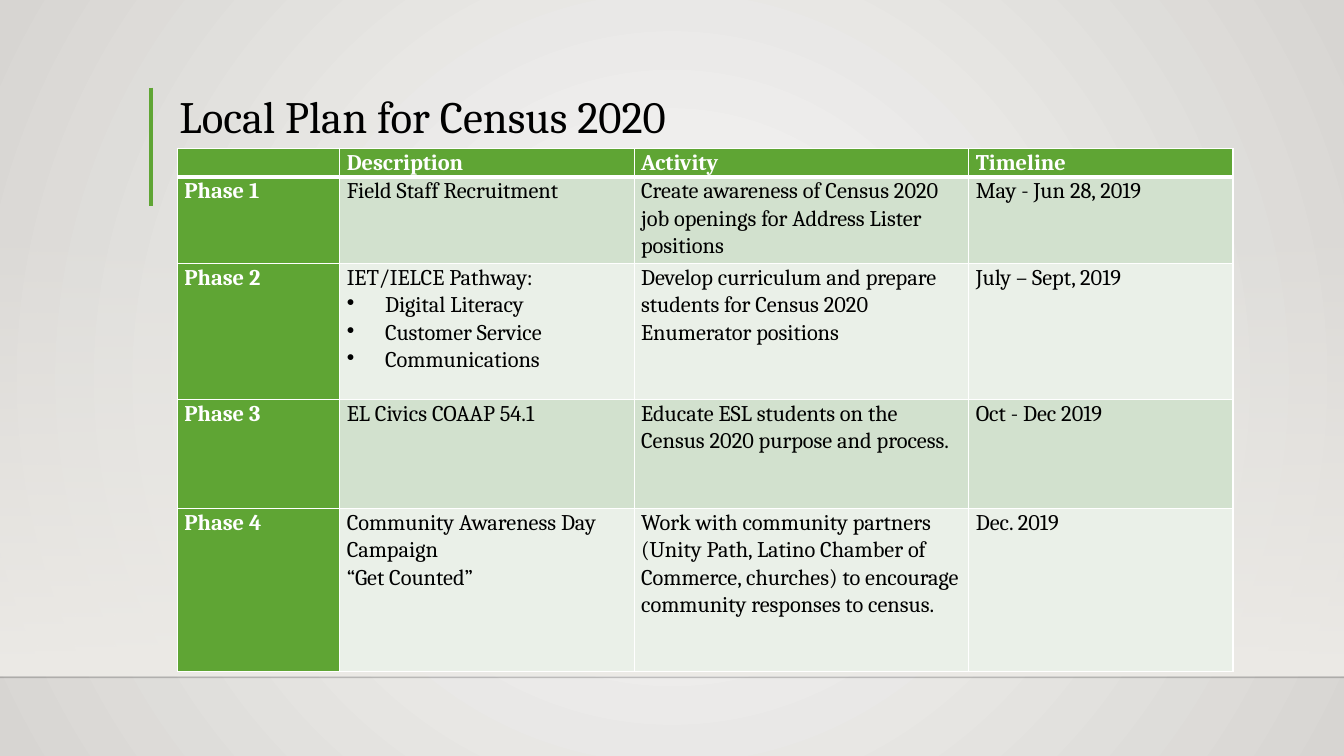
from lxml import etree
from pptx import Presentation
from pptx import util as u
from pptx.dml.color import RGBColor
from pptx.enum import shapes, text
from pptx.oxml import ns

FONT = "Cambria"
BULLET = "•"
COLORS = {
    "green": "5FA534", "band": "D2E1CE", "pale": "EAF0E8", "white": "FFFFFF",
    "black": "000000", "horizon": "000001", "floor": "EDEBE7",
    "center": "FAFAF9", "edge": "D7D5D2",
}
COLUMN_WIDTHS = [1.61, 2.92, 3.32, 2.62]
ROW_HEIGHTS = [0.26, 0.81, 1.35, 1.08, 1.62]
PLAN = [
    ["", "Description", "Activity", "Timeline"],
    ["Phase 1", "Field Staff Recruitment",
     "Create awareness of Census 2020 job openings for Address Lister positions",
     "May - Jun 28, 2019"],
    ["Phase 2",
     "IET/IELCE Pathway:\n•Digital Literacy\n•Customer Service\n•Communications",
     "Develop curriculum and prepare students for Census 2020 Enumerator positions",
     "July – Sept, 2019"],
    ["Phase 3", "EL Civics COAAP 54.1",
     "Educate ESL students on the Census 2020 purpose and process.",
     "Oct - Dec 2019"],
    ["Phase 4", "Community Awareness Day Campaign\n“Get Counted”",
     "Work with community partners (Unity Path, Latino Chamber of Commerce, "
     "churches) to encourage community responses to census.",
     "Dec. 2019"],
]


def rgb(name):
    """Return the named colour."""
    return RGBColor.from_string(COLORS[name])


def apply_format(target, values):
    """Set each attribute in values on target."""
    for name, value in values.items():
        setattr(target, name, value)


def add_element(parent, tag, **attributes):
    """Append a drawing element with attributes to parent."""
    return etree.SubElement(parent, ns.qn(tag), attributes)


def set_alpha(element, color, percent):
    """Give the first use of a colour inside element an opacity."""
    found = next(node for node in element.iter(ns.qn("a:srgbClr"))
                 if node.get("val") == COLORS[color])
    add_element(found, "a:alpha", val=str(percent * 1000))


def set_gradient(fill, names):
    """Fill with a gradient through two named colours."""
    fill.gradient()
    for stop, name in zip(fill.gradient_stops, names):
        stop.color.rgb = rgb(name)


def set_background(slide):
    """Paint the slide with a circular gradient."""
    set_gradient(slide.background.fill, ["center", "edge"])
    linear = next(slide.background._cSld.iter(ns.qn("a:lin")))
    gradient = linear.getparent()
    gradient.remove(linear)
    circle = add_element(gradient, "a:path", path="circle")
    add_element(circle, "a:fillToRect", l="50000", t="50000", r="50000", b="50000")


def add_floor(slide):
    """Add the panel that fades in above the horizon."""
    shape = slide.shapes.add_shape(
        shapes.MSO_SHAPE.RECTANGLE, u.Inches(0), u.Inches(2.2),
        u.Inches(13.33), u.Inches(4.5))
    shape.shadow.inherit = False
    shape.line.fill.background()
    set_gradient(shape.fill, ["floor", "floor"])
    shape.fill.gradient_angle = 270
    set_alpha(shape.fill._xPr, "floor", 0)


def add_line(slide, start, end, color, width):
    """Add a straight line and return it."""
    line = slide.shapes.add_connector(
        shapes.MSO_CONNECTOR.STRAIGHT, *map(u.Inches, start + end))
    line.line.color.rgb = rgb(color)
    line.line.width = u.Pt(width)
    add_element(line._element.spPr, "a:effectLst")
    return line


def add_run(paragraph, content, size, color, bold=False):
    """Add formatted text to a paragraph."""
    run = paragraph.add_run()
    run.text = content
    apply_format(run.font, {"name": FONT, "size": u.Pt(size), "bold": bold})
    run.font.color.rgb = rgb(color)


def add_title(slide, content):
    """Add the slide title."""
    box = slide.shapes.add_textbox(
        u.Inches(1.68), u.Inches(0.89), u.Inches(10.41), u.Inches(0.58))
    apply_format(box.text_frame, {
        "word_wrap": True, "vertical_anchor": text.MSO_ANCHOR.BOTTOM})
    paragraph = box.text_frame.paragraphs[0]
    paragraph.line_spacing = 0.9
    add_run(paragraph, content, 32, "black")


def add_borders(cell, bottom_width):
    """Draw white borders round a cell."""
    properties = cell._tc.get_or_add_tcPr()
    for side, width in zip("LRTB", [1, 1, 1, bottom_width]):
        line = add_element(properties, f"a:ln{side}", w=str(u.Pt(width)))
        fill = add_element(line, "a:solidFill")
        add_element(fill, "a:srgbClr", val=COLORS["white"])


def fill_cell(cell, content, fill, heading, bottom_width):
    """Write and format one table cell."""
    apply_format(cell, {
        "margin_left": u.Inches(0.07), "margin_right": u.Inches(0.07),
        "margin_top": 0, "margin_bottom": 0})
    add_borders(cell, bottom_width)
    cell.fill.solid()
    cell.fill.fore_color.rgb = rgb(fill)
    for index, line in enumerate(content.split("\n")):
        frame = cell.text_frame
        paragraph = frame.add_paragraph() if index else frame.paragraphs[0]
        paragraph.line_spacing = 1.07
        if line.startswith(BULLET):
            properties = paragraph._p.get_or_add_pPr()
            indent = u.Inches(0.38)
            properties.set("marL", str(indent))
            properties.set("indent", str(-indent))
            add_element(properties, "a:buChar", char=BULLET)
        if line:
            add_run(paragraph, line.lstrip(BULLET), 16,
                    "white" if heading else "black", heading)
        else:
            add_element(paragraph._p, "a:endParaRPr", sz="1600")


def add_plan_table(slide):
    """Add the table of phases."""
    table = slide.shapes.add_table(
        len(PLAN), len(COLUMN_WIDTHS), u.Inches(1.76), u.Inches(1.47),
        u.Inches(sum(COLUMN_WIDTHS)), u.Inches(sum(ROW_HEIGHTS))).table
    for column, width in zip(table.columns, COLUMN_WIDTHS):
        column.width = u.Inches(width)
    for row, height in zip(table.rows, ROW_HEIGHTS):
        row.height = u.Inches(height)
    for row_index, contents in enumerate(PLAN):
        for column_index, content in enumerate(contents):
            heading = row_index == 0 or column_index == 0
            band = "band" if row_index % 2 else "pale"
            fill_cell(table.cell(row_index, column_index), content,
                      "green" if heading else band, heading,
                      1 if row_index else 3)


def main():
    """Build and save the presentation."""
    presentation = Presentation()
    apply_format(presentation, {
        "slide_width": u.Inches(13.33), "slide_height": u.Inches(7.5)})
    slide = presentation.slides.add_slide(presentation.slide_layouts[6])
    set_background(slide)
    add_floor(slide)
    horizon = add_line(slide, (0, 6.72), (13.33, 6.72), "horizon", 1)
    set_alpha(horizon._element, "horizon", 20)
    add_line(slide, (1.5, 0.87), (1.5, 2.04), "green", 3)
    add_title(slide, "Local Plan for Census 2020")
    add_plan_table(slide)
    presentation.save("out.pptx")


if __name__ == "__main__":
    main()
